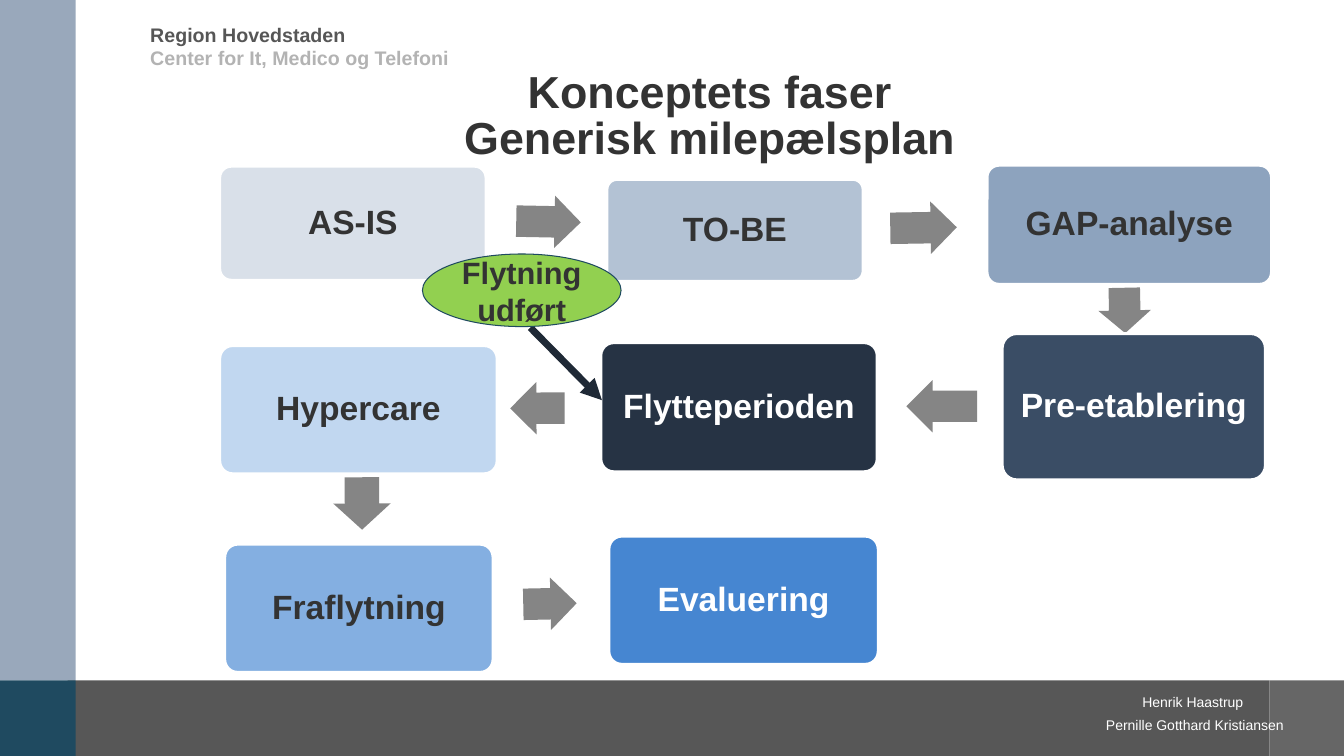
from lxml.etree import SubElement
from pptx import Presentation
from pptx.dml.color import RGBColor
from pptx.enum.shapes import MSO_CONNECTOR, MSO_SHAPE
from pptx.enum.text import MSO_ANCHOR, PP_ALIGN
from pptx.oxml.ns import qn
from pptx.util import Inches, Pt

DARK, WHITE, ARROW_GREY = "333333", "FFFFFF", "858585"

presentation = Presentation()
presentation.slide_width = Inches(13.33)
presentation.slide_height = Inches(7.5)
slide = presentation.slides.add_slide(presentation.slide_layouts[6])


def add_filled(preset, place, fill, line=None, line_width=0):
    shape = slide.shapes.add_shape(preset, *[Inches(length) for length in place])
    shape.shadow.inherit = False
    shape.fill.solid()
    shape.fill.fore_color.rgb = RGBColor.from_string(fill)
    if line:
        shape.line.color.rgb = RGBColor.from_string(line)
        shape.line.width = Pt(line_width)
    else:
        shape.line.fill.background()
    return shape


def write(shape, text, size, color, align, bold=True, anchor=MSO_ANCHOR.MIDDLE, inset=0):
    frame = shape.text_frame
    frame.word_wrap = True
    frame.vertical_anchor = anchor
    frame.margin_left = frame.margin_right = Inches(inset)
    frame.margin_top = frame.margin_bottom = Inches(inset)
    paragraph = frame.paragraphs[0]
    paragraph.text = text
    paragraph.alignment = align
    for run in paragraph.runs:
        run.font.name = "Arial"
        run.font.size = Pt(size)
        run.font.bold = bold
        run.font.color.rgb = RGBColor.from_string(color)
    return paragraph


# Side and bottom bands
for place, fill in [
    ((0.67, 6.75, 11.92, 0.75), "575757"),
    ((12.59, 6.75, 0.74, 0.75), "666666"),
    ((0, 0, 0.75, 6.75), "99A8BB"),
    ((0, 6.75, 0.75, 0.75), "1F4A60"),
]:
    add_filled(MSO_SHAPE.RECTANGLE, place, fill)

# Sender and author lines
for place, text, size, color, align, bold in [
    ((1.49, 0.23, 5.63, 0.24), "Region Hovedstaden", 14, "565656", PP_ALIGN.LEFT, True),
    ((1.49, 0.46, 5.63, 0.46), "Center for It, Medico og Telefoni", 14, "B3B3B3", PP_ALIGN.LEFT, True),
    ((8.63, 6.88, 3.7, 0.2), "Henrik Haastrup", 10, WHITE, PP_ALIGN.RIGHT, False),
    ((10.7, 7.11, 2.03, 0.21), "Pernille Gotthard Kristiansen", 10, WHITE, PP_ALIGN.RIGHT, False),
]:
    label = slide.shapes.add_textbox(*[Inches(length) for length in place])
    write(label, text, size, color, align, bold, MSO_ANCHOR.TOP)

# Heading
heading = slide.shapes.add_textbox(Inches(3.16), Inches(0.73), Inches(7.76), Inches(0.89))
heading_line = write(heading, "Konceptets faser\vGenerisk milepælsplan", 32, DARK,
                     PP_ALIGN.CENTER, anchor=MSO_ANCHOR.BOTTOM)
heading_line.line_spacing = 0.85

# Phases, each followed by the arrow to the next: place and rotation
phases = [
    ("AS-IS", (2.18, 1.65, 2.64, 1.13), "D9E0E9", DARK, (5.12, 1.94, 0.64, 0.52), 1.1),
    ("TO-BE", (6.02, 1.78, 2.54, 1.01), "B3C2D4", DARK, (8.83, 2, 0.66, 0.52), 359.1),
    ("GAP-analyse", (9.79, 1.64, 2.82, 1.18), "8DA3BE", DARK, (10.93, 2.82, 0.45, 0.52), 88.8),
    ("Pre-etablering", (9.94, 3.31, 2.61, 1.45), "3A4D65", WHITE, (8.99, 3.77, 0.7, 0.52), 180),
    ("Flytteperioden", (5.96, 3.4, 2.74, 1.28), "263344", WHITE, (5.06, 3.79, 0.54, 0.52), 179.7),
    ("Hypercare", (2.18, 3.43, 2.75, 1.27), "C1D7F0", DARK, (3.33, 4.71, 0.52, 0.57), 89.8),
    ("Fraflytning", (2.23, 5.4, 2.66, 1.27), "84AFE1", DARK, (5.19, 5.73, 0.53, 0.52), 358.8),
    ("Evaluering", (6.04, 5.32, 2.67, 1.27), "4686D1", WHITE, None, 0),
]
for name, place, fill, color, arrow_place, rotation in phases:
    phase = add_filled(MSO_SHAPE.ROUNDED_RECTANGLE, place, fill, WHITE, 2)
    phase.adjustments[0] = 0.1
    write(phase, name, 24, color, PP_ALIGN.CENTER, inset=0.05).line_spacing = 0.9
    if arrow_place:
        step = add_filled(MSO_SHAPE.RIGHT_ARROW, arrow_place, ARROW_GREY)
        step.adjustments[0] = 0.6
        step.adjustments[1] = 0.5
        step.rotation = rotation

# Milestone pointing at the move period
pointer = slide.shapes.add_connector(
    MSO_CONNECTOR.STRAIGHT, Inches(5.26), Inches(3.25), Inches(5.97), Inches(3.97))
pointer.line.color.rgb = RGBColor.from_string("1F2936")
pointer.line.width = Pt(5)
SubElement(pointer.line._get_or_add_ln(), qn("a:tailEnd"), type="triangle")
SubElement(pointer._element.spPr, qn("a:effectLst"))

milestone = add_filled(MSO_SHAPE.OVAL, (4.19, 2.52, 1.97, 0.72), "92D050", "1F4A60", 0.75)
write(milestone, "Flytning udført", 22, DARK, PP_ALIGN.CENTER)

presentation.save("out.pptx")
